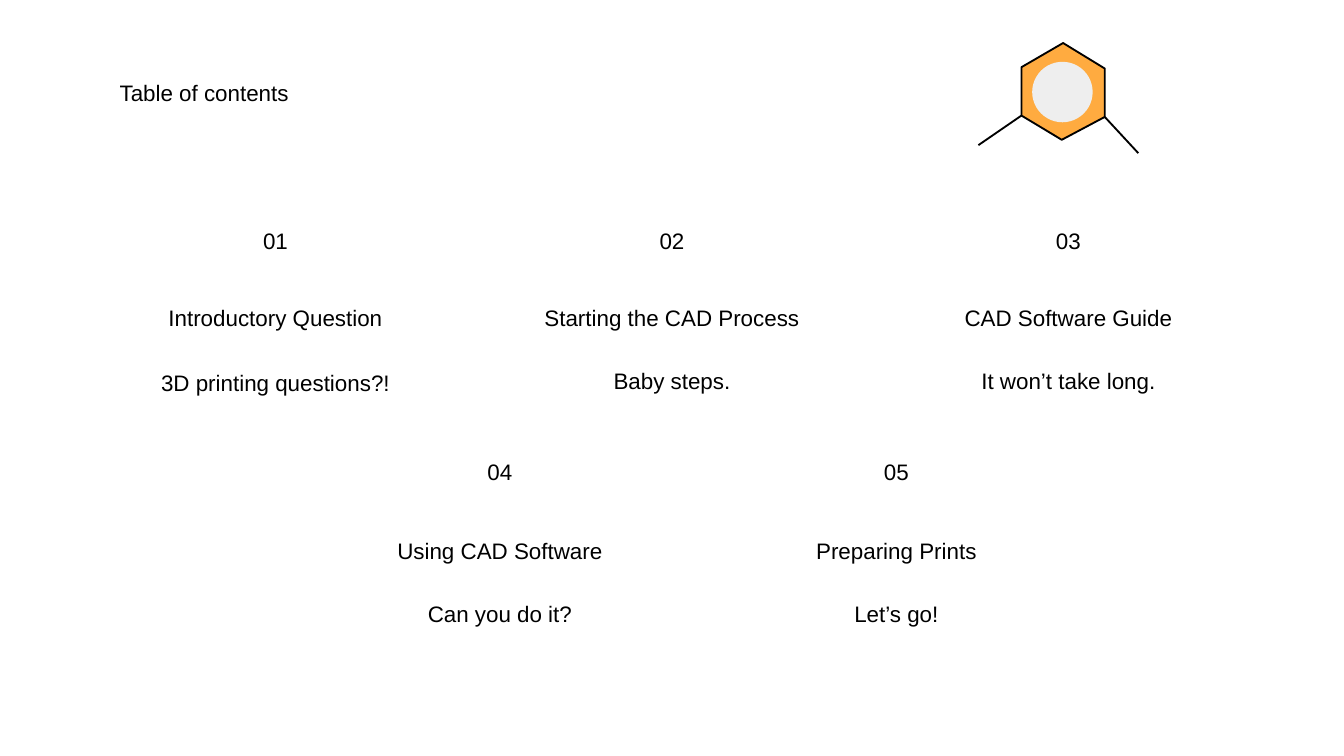
from pptx import Presentation
from pptx import util as u
from pptx.dml.color import RGBColor
from pptx.enum import shapes, text
from pptx.oxml import parse_xml
from pptx.oxml.ns import nsdecls

# Content: each row has its left edge, the tops of its three lines, and its topics
TITLE = "Table of contents"
ROWS = [
    {"left": 0.79, "tops": (1.41, 2.17, 2.57), "topics": [
        ("Introductory Question", "3D printing questions?!", 1.15),
        ("Starting the CAD Process", "Baby steps.", 1),
        ("CAD Software Guide", "It won’t take long.", 1)]},
    {"left": 2.46, "tops": (3.13, 3.91, 4.30), "topics": [
        ("Using CAD Software", "Can you do it?", 1),
        ("Preparing Prints", "Let’s go!", 1)]},
]
WIDTH = 10
PITCH, COLUMN, NUMBER = 2.95, 2.52, 0.93
HEIGHTS = (0.76, 0.38, 0.53)

# Molecule geometry in inches
HEXAGON = [(7.6, 0.86), (7.6, 0.5), (7.91, 0.32), (8.22, 0.51), (8.22, 0.87), (7.9, 1.04)]
BONDS = [(HEXAGON[0], (7.28, 1.08)), (HEXAGON[4], (8.47, 1.14))]
CORE = (7.68, 0.46, 0.45, 0.45)
BLACK, ORANGE, GRAY = "000000", "FFAB40", "EEEEEE"


def color(value):
    return RGBColor.from_string(value)


def inches(values):
    return [u.Inches(value) for value in values]


def write(box, words, align=text.PP_ALIGN.CENTER, anchor=text.MSO_ANCHOR.MIDDLE,
          size=12, font="Arial", fill=BLACK, spacing=1):
    frame = box.text_frame
    frame.word_wrap = True
    frame.auto_size = text.MSO_AUTO_SIZE.NONE
    frame.vertical_anchor = anchor
    frame.margin_left = frame.margin_right = u.Inches(0.1)
    frame.margin_top = frame.margin_bottom = u.Inches(0.1)
    para = frame.paragraphs[0]
    para.alignment, para.line_spacing = align, spacing
    span = para.add_run()
    span.text = words
    span.font.size, span.font.name = u.Pt(size), font
    span.font.color.rgb = color(fill)


def style(shape, fill, line=None):
    shape.shadow.inherit = False
    shape.fill.solid()
    shape.fill.fore_color.rgb = color(fill)
    if line:
        shape.line.color.rgb = color(line)
        shape.line.width = u.Pt(1)
    else:
        shape.line.fill.background()


# Widescreen page, 16:9
deck = Presentation()
deck.slide_width, deck.slide_height = inches((WIDTH, WIDTH * 9 / 16))
page = deck.slides.add_slide(deck.slide_layouts[5])

# Title
title = page.shapes.title
title.left, title.top, title.width, title.height = inches((0.79, 0.49, 8.43, 0.63))
write(title, TITLE, align=text.PP_ALIGN.LEFT, anchor=text.MSO_ANCHOR.TOP)

# Numbered topics, each centred in its column
number = 0
for row in ROWS:
    for column, (heading, detail, spacing) in enumerate(row["topics"]):
        number += 1
        left = row["left"] + column * PITCH
        lines = [(f"{number:02}", NUMBER, 1), (heading, COLUMN, 1), (detail, COLUMN, spacing)]
        for (words, width, gap), top, height in zip(lines, row["tops"], HEIGHTS):
            place = (left + (COLUMN - width) / 2, top, width, height)
            box = page.shapes.add_textbox(*inches(place))
            write(box, words, spacing=gap)

# Molecule: hexagon, core and two bonds
points = [inches(point) for point in HEXAGON]
builder = page.shapes.build_freeform(*points[0])
builder.add_line_segments(points[1:], close=True)
style(builder.convert_to_shape(), ORANGE, BLACK)
style(page.shapes.add_shape(shapes.MSO_SHAPE.OVAL, *inches(CORE)), GRAY)
for start, end in BONDS:
    bond = page.shapes.add_connector(shapes.MSO_CONNECTOR.STRAIGHT, *inches(start + end))
    bond.line.color.rgb = color(BLACK)
    bond.line.width = u.Pt(1)
    bond._element.spPr.append(parse_xml(f"<a:effectLst {nsdecls('a')}/>"))

deck.save("out.pptx")
